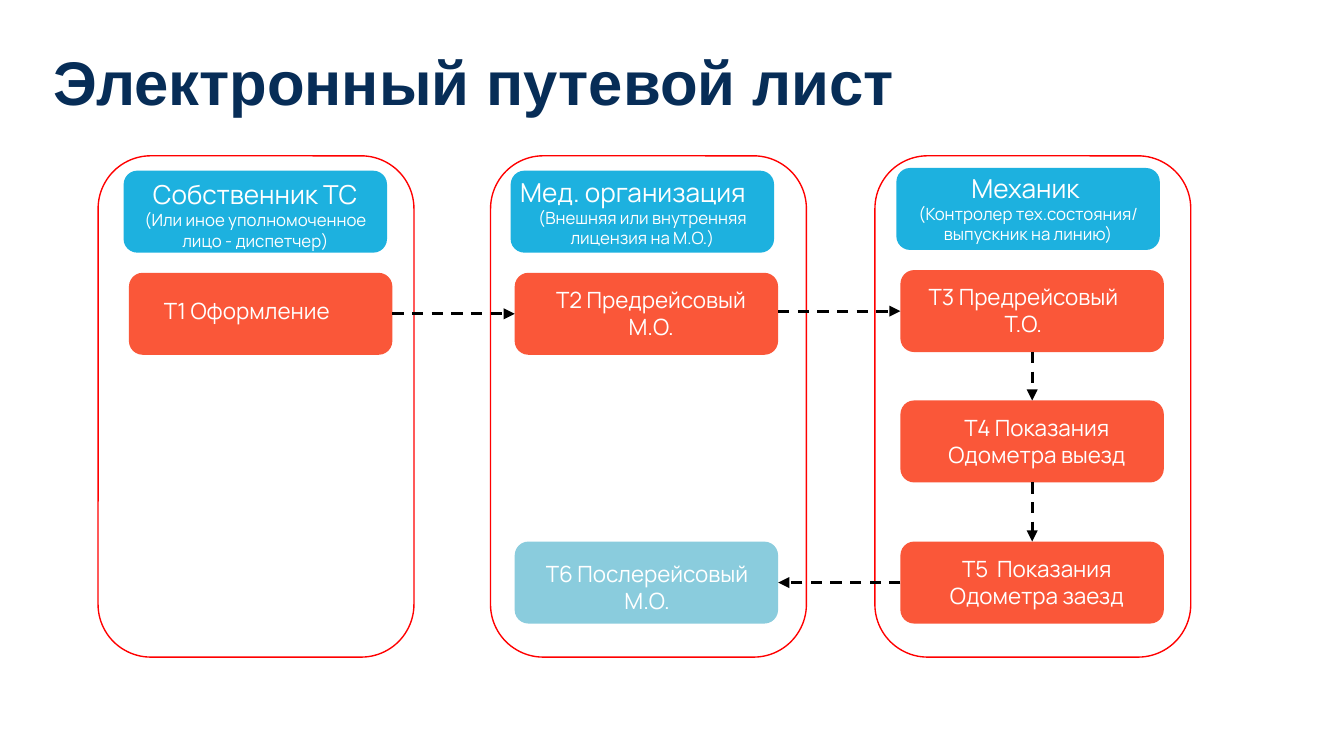
from dataclasses import dataclass
from lxml.etree import SubElement
from pptx import Presentation
from pptx.dml.color import RGBColor
from pptx.enum.dml import MSO_LINE
from pptx.enum.shapes import MSO_CONNECTOR, MSO_SHAPE
from pptx.enum.text import MSO_ANCHOR, PP_ALIGN
from pptx.oxml.ns import qn
from pptx.util import Inches, Pt

COLORS = {
    "navy": "072D57",
    "red": "FF0000",
    "blue": "1DB1DF",
    "orange": "FA5739",
    "pale": "8ACCDD",
    "white": "FFFFFF",
    "black": "000000",
}
SLIDE_W = 10
SLIDE_H = SLIDE_W * 9 / 16
BOX_W, BOX_H = 1.96, 0.61
LANE_TOP, LANE_W, LANE_H = 1.16, 2.35, 3.73
LANES = (0.73, 3.65, 6.51)
COLUMNS = (0.96, 3.83, 6.7)


@dataclass(frozen=True)
class Header:
    left: float
    top: float
    text_top: float
    title: str
    note: str
    align: PP_ALIGN = PP_ALIGN.CENTER


@dataclass(frozen=True)
class Step:
    """A process box; dx, dy and width place its label within it."""
    left: float
    top: float
    label: str
    dx: float = 0.19
    dy: float = 0.06
    width: float = 1.65
    height: float = 0.48
    fill: str = "orange"
    align: PP_ALIGN = PP_ALIGN.CENTER


HEADERS = (
    Header(0.92, 1.27, 1.29, "Собственник ТС",
           "(Или иное уполномоченное лицо - диспетчер)"),
    Header(3.8, 1.27, 1.27, "Мед. организация",
           "(Внешняя или внутренняя лицензия на М.О.)", PP_ALIGN.LEFT),
    Header(6.67, 1.25, 1.24, "Механик ",
           "(Контролер тех.состояния/ выпускник на линию)"),
)
STEPS = (
    Step(COLUMNS[0], 2.03, "Т1 Оформление", dy=0.14, height=0.28,
         align=PP_ALIGN.LEFT),
    Step(COLUMNS[1], 2.03, "Т2 Предрейсовый М.О."),
    Step(COLUMNS[2], 2.01, "Т3 Предрейсовый Т.О.", dx=0.13, width=1.57),
    Step(COLUMNS[2], 2.98, "Т4 Показания Одометра выезд"),
    Step(COLUMNS[2], 4.03, "Т5  Показания Одометра заезд"),
    Step(COLUMNS[1], 4.03, "Т6 Послерейсовый М.О.", dx=0.13, dy=0.1,
         width=1.71, fill="pale"),
)


def color(name: str) -> RGBColor:
    return RGBColor.from_string(COLORS[name])


def add_round(slide, left: float, top: float, width: float, height: float,
              fill: str = "", line: str = "") -> None:
    shape = slide.shapes.add_shape(
        MSO_SHAPE.ROUNDED_RECTANGLE,
        Inches(left), Inches(top), Inches(width), Inches(height))
    shape.shadow.inherit = False
    shape.adjustments[0] = 0.167
    if fill:
        shape.fill.solid()
        shape.fill.fore_color.rgb = color(fill)
    else:
        shape.fill.background()
    if line:
        shape.line.color.rgb = color(line)
        shape.line.width = Pt(0.75)
    else:
        shape.line.fill.background()


def add_box(slide, left: float, top: float, width: float, height: float):
    """Add an empty wrapping text box and return its text frame."""
    box = slide.shapes.add_textbox(
        Inches(left), Inches(top), Inches(width), Inches(height))
    frame = box.text_frame
    frame.word_wrap = True
    frame.margin_left = frame.margin_right = Inches(0.07)
    frame.margin_top = frame.margin_bottom = Inches(0.04)
    return frame


def put_text(para, text: str, *, size: float, font: str = "Manrope",
             tint: str = "white", bold: bool = False,
             align: PP_ALIGN = PP_ALIGN.CENTER) -> None:
    para.alignment = align
    run = para.add_run()
    run.text = text
    run.font.size = Pt(size)
    run.font.name = font
    run.font.bold = bold
    run.font.color.rgb = color(tint)


def add_header(slide, head: Header) -> None:
    add_round(slide, head.left, head.top, BOX_W, BOX_H, fill="blue")
    frame = add_box(slide, head.left, head.text_top, BOX_W, BOX_H)
    put_text(frame.paragraphs[0], head.title, size=14, align=head.align)
    put_text(frame.add_paragraph(), head.note, size=9)


def add_step(slide, step: Step) -> None:
    add_round(slide, step.left, step.top, BOX_W, BOX_H, fill=step.fill)
    frame = add_box(slide, step.left + step.dx, step.top + step.dy,
                    step.width, step.height)
    put_text(frame.paragraphs[0], step.label, size=12, align=step.align)


def add_arrow(slide, start: Step, end: Step) -> None:
    """Join facing edges of two steps, level with the middle of the end."""
    mid_x, mid_y = end.left + BOX_W / 2, end.top + BOX_H / 2
    if start.left == end.left:
        ends = (mid_x, start.top + BOX_H, mid_x, end.top)
    elif start.left < end.left:
        ends = (start.left + BOX_W, mid_y, end.left, mid_y)
    else:
        ends = (start.left, mid_y, end.left + BOX_W, mid_y)
    arrow = slide.shapes.add_connector(
        MSO_CONNECTOR.STRAIGHT, *(Inches(value) for value in ends))
    arrow.line.color.rgb = color("black")
    arrow.line.width = Pt(1.5)
    arrow.line.dash_style = MSO_LINE.DASH
    SubElement(arrow.line._get_or_add_ln(), qn("a:tailEnd"), type="triangle")
    SubElement(arrow._element.spPr, qn("a:effectLst"))


def main() -> None:
    deck = Presentation()
    deck.slide_width, deck.slide_height = Inches(SLIDE_W), Inches(SLIDE_H)
    slide = deck.slides.add_slide(deck.slide_layouts[6])

    title = add_box(slide, 0.33, 0.26, 8.39, 0.76)
    title.vertical_anchor = MSO_ANCHOR.MIDDLE
    title.paragraphs[0].line_spacing = 0.9
    put_text(title.paragraphs[0], "Электронный путевой лист", size=33,
             font="Arial", tint="navy", bold=True, align=PP_ALIGN.LEFT)

    for left in LANES:
        add_round(slide, left, LANE_TOP, LANE_W, LANE_H, line="red")
    for head in HEADERS:
        add_header(slide, head)
    for step in STEPS:
        add_step(slide, step)
    for start, end in zip(STEPS, STEPS[1:]):
        add_arrow(slide, start, end)
    deck.save("out.pptx")


if __name__ == "__main__":
    main()
